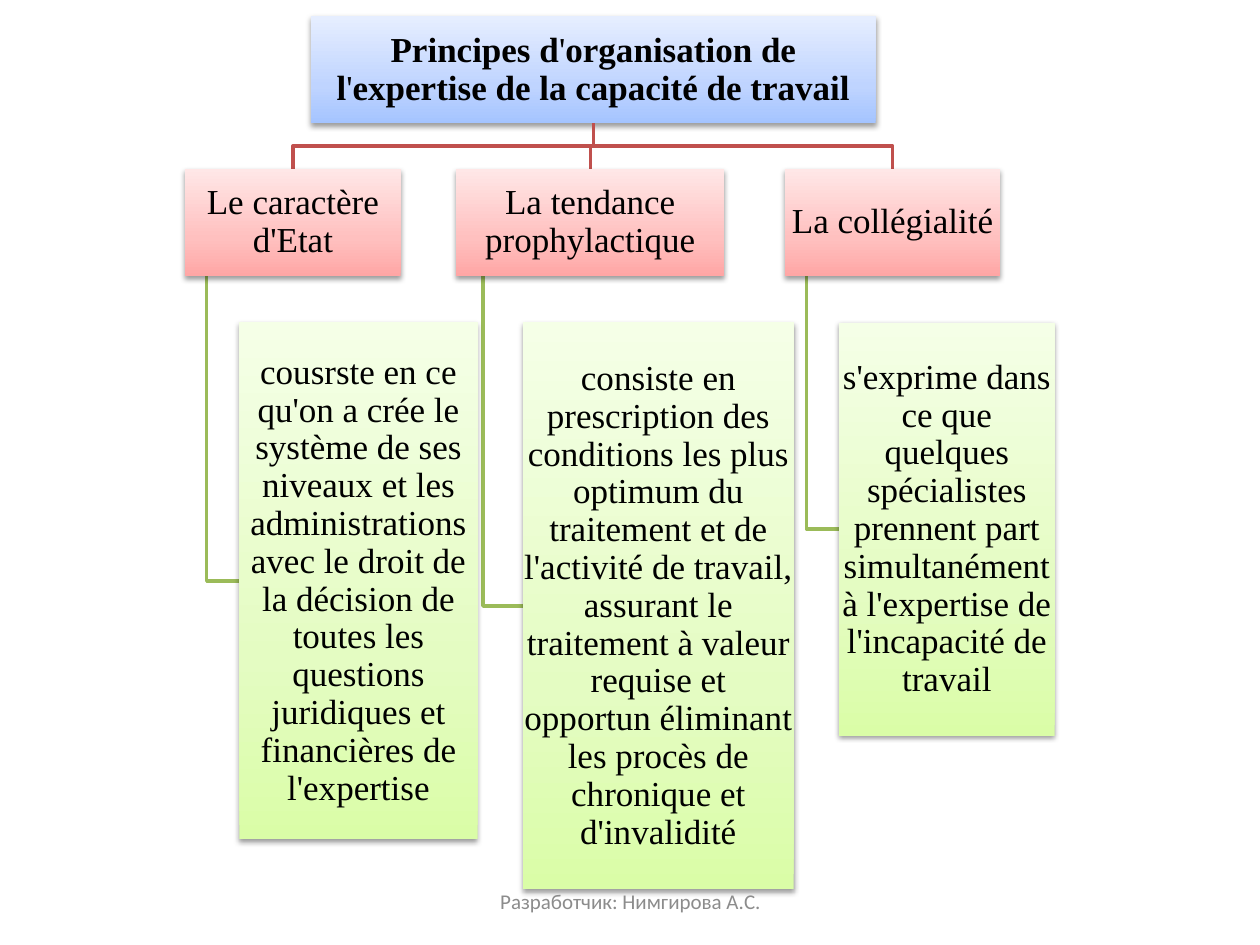
import copy
import itertools
from dataclasses import dataclass

import lxml.etree
import pptx
import pptx.dml.color
import pptx.enum.shapes
import pptx.enum.text
import pptx.oxml.ns
import pptx.util

Inches = pptx.util.Inches
Pt = pptx.util.Pt
RGBColor = pptx.dml.color.RGBColor
qn = pptx.oxml.ns.qn

BLACK = RGBColor(0x00, 0x00, 0x00)
GRAY = RGBColor(0x8C, 0x8C, 0x8C)
RED = RGBColor(0xC0, 0x50, 0x4D)
GREEN = RGBColor(0x9B, 0xBB, 0x59)
BLUE_SHADES = (RGBColor(0xA4, 0xC4, 0xFF), RGBColor(0xBF, 0xD4, 0xFF), RGBColor(0xE6, 0xEE, 0xFF))
RED_SHADES = (RGBColor(0xFF, 0xA6, 0xA5), RGBColor(0xFF, 0xC0, 0xBF), RGBColor(0xFF, 0xE7, 0xE7))
GREEN_SHADES = (RGBColor(0xDA, 0xFD, 0xA7), RGBColor(0xE4, 0xFC, 0xC2), RGBColor(0xF5, 0xFF, 0xE7))
SHADE_POSITIONS = (0, 0.35, 1)


@dataclass(frozen=True)
class Box:
    left: float
    top: float
    width: float
    height: float

    @property
    def center(self) -> float:
        return self.left + self.width / 2

    @property
    def middle(self) -> float:
        return self.top + self.height / 2

    @property
    def bottom(self) -> float:
        return self.top + self.height

    def lengths(self) -> list:
        return [Inches(v) for v in (self.left, self.top, self.width, self.height)]


@dataclass(frozen=True)
class Principle:
    name: str
    name_box: Box
    detail: str
    detail_box: Box


HEADING = "Principes d'organisation de l'expertise de la capacité de travail"
HEADING_BOX = Box(2.47, 0.13, 4.48, 0.85)
FOOTER_BOX = Box(3.42, 6.95, 3.17, 0.4)
NAME_TOP, NAME_HEIGHT, DETAIL_TOP = 1.34, 0.85, 2.56

PRINCIPLES = [
    Principle(
        "Le caractère d'Etat",
        Box(1.47, NAME_TOP, 1.71, NAME_HEIGHT),
        "cousrste en ce qu'on a crée le système de ses niveaux et les administrations "
        "avec le droit de la décision de toutes les questions juridiques et financières "
        "de l'expertise",
        Box(1.9, DETAIL_TOP, 1.89, 4.1),
    ),
    Principle(
        "La tendance prophylactique",
        Box(3.62, NAME_TOP, 2.13, NAME_HEIGHT),
        "consiste en prescription des conditions les plus optimum du traitement et de "
        "l'activité de travail, assurant le traitement à valeur requise et opportun "
        "éliminant les procès de chronique et d'invalidité",
        Box(4.15, DETAIL_TOP, 2.15, 4.5),
    ),
    Principle(
        "La collégialité",
        Box(6.23, NAME_TOP, 1.71, NAME_HEIGHT),
        "s'exprime dans ce que quelques spécialistes prennent part simultanément à "
        "l'expertise de l'incapacité de travail",
        Box(6.66, DETAIL_TOP, 1.71, 3.28),
    ),
]


def write(shape, text: str, *, size: float = 20, font: str = "Times New Roman",
          color: RGBColor = BLACK, bold: bool = False, inset: float = 0.01,
          line_spacing: float = 0.9, space_after: float = 7) -> None:
    frame = shape.text_frame
    frame.word_wrap = True
    frame.auto_size = pptx.enum.text.MSO_AUTO_SIZE.NONE
    frame.vertical_anchor = pptx.enum.text.MSO_ANCHOR.MIDDLE
    frame.margin_left = frame.margin_right = Inches(inset)
    frame.margin_top = frame.margin_bottom = Inches(inset)
    paragraph = frame.paragraphs[0]
    paragraph.alignment = pptx.enum.text.PP_ALIGN.CENTER
    paragraph.line_spacing = line_spacing
    paragraph.space_after = Pt(space_after)
    for heavy, letters in itertools.groupby(text, key=lambda letter: bold and letter != "'"):
        run = paragraph.add_run()
        run.text = "".join(letters)
        run.font.size = Pt(size)
        run.font.name = font
        run.font.bold = heavy
        run.font.color.rgb = color


def add_shadow(shape) -> None:
    shape.shadow.inherit = False
    effects = shape._element.spPr.find(qn("a:effectLst"))
    shadow = lxml.etree.SubElement(effects, qn("a:outerShdw"), blurRad=str(Pt(3.1)),
                                   dist=str(Pt(1.6)), dir="5400000", rotWithShape="0")
    tint = lxml.etree.SubElement(shadow, qn("a:srgbClr"), val="000000")
    lxml.etree.SubElement(tint, qn("a:alpha"), val="38000")


def style_card(shape, shades: tuple) -> None:
    shape.fill.gradient()
    shape.fill.gradient_angle = 90
    stop_list = shape._element.spPr.find(".//" + qn("a:gsLst"))
    stop_list.append(copy.deepcopy(stop_list[0]))
    for stop, position, shade in zip(shape.fill.gradient_stops, SHADE_POSITIONS, shades):
        stop.position = position
        stop.color.rgb = shade
    shape.line.fill.background()
    add_shadow(shape)


def add_card(slide, box: Box, text: str, shades: tuple) -> None:
    card = slide.shapes.add_shape(pptx.enum.shapes.MSO_SHAPE.RECTANGLE, *box.lengths())
    style_card(card, shades)
    write(card, text)


def add_branch(slide, points: list, color: RGBColor) -> None:
    start, *corners = [(Inches(x), Inches(y)) for x, y in points]
    builder = slide.shapes.build_freeform(*start)
    builder.add_line_segments(corners, close=False)
    branch = builder.convert_to_shape()
    branch.fill.background()
    branch.line.color.rgb = color
    branch.line.width = Pt(2)
    branch.shadow.inherit = False


def add_branches(slide, principle: Principle) -> None:
    name, detail = principle.name_box, principle.detail_box
    fork = (HEADING_BOX.bottom + name.top) / 2
    add_branch(slide, [(HEADING_BOX.center, HEADING_BOX.bottom), (HEADING_BOX.center, fork),
                       (name.center, fork), (name.center, name.top)], RED)
    stem = name.left + name.width / 10
    add_branch(slide, [(stem, name.bottom), (stem, detail.middle),
                       (detail.left, detail.middle)], GREEN)


def main() -> None:
    presentation = pptx.Presentation()
    presentation.slide_width = Inches(10)
    presentation.slide_height = Inches(7.5)
    slide = presentation.slides.add_slide(presentation.slide_layouts[5])

    heading = slide.shapes.title
    heading.left, heading.top, heading.width, heading.height = HEADING_BOX.lengths()
    style_card(heading, BLUE_SHADES)
    write(heading, HEADING, bold=True)

    for principle in PRINCIPLES:
        add_branches(slide, principle)
    for principle in PRINCIPLES:
        add_card(slide, principle.name_box, principle.name, RED_SHADES)
        add_card(slide, principle.detail_box, principle.detail, GREEN_SHADES)

    footer = slide.shapes.add_textbox(*FOOTER_BOX.lengths())
    write(footer, "Разработчик: Нимгирова А.С.", size=12, font="Calibri", color=GRAY,
          inset=0.05, line_spacing=1, space_after=0)

    presentation.save("out.pptx")


if __name__ == "__main__":
    main()
